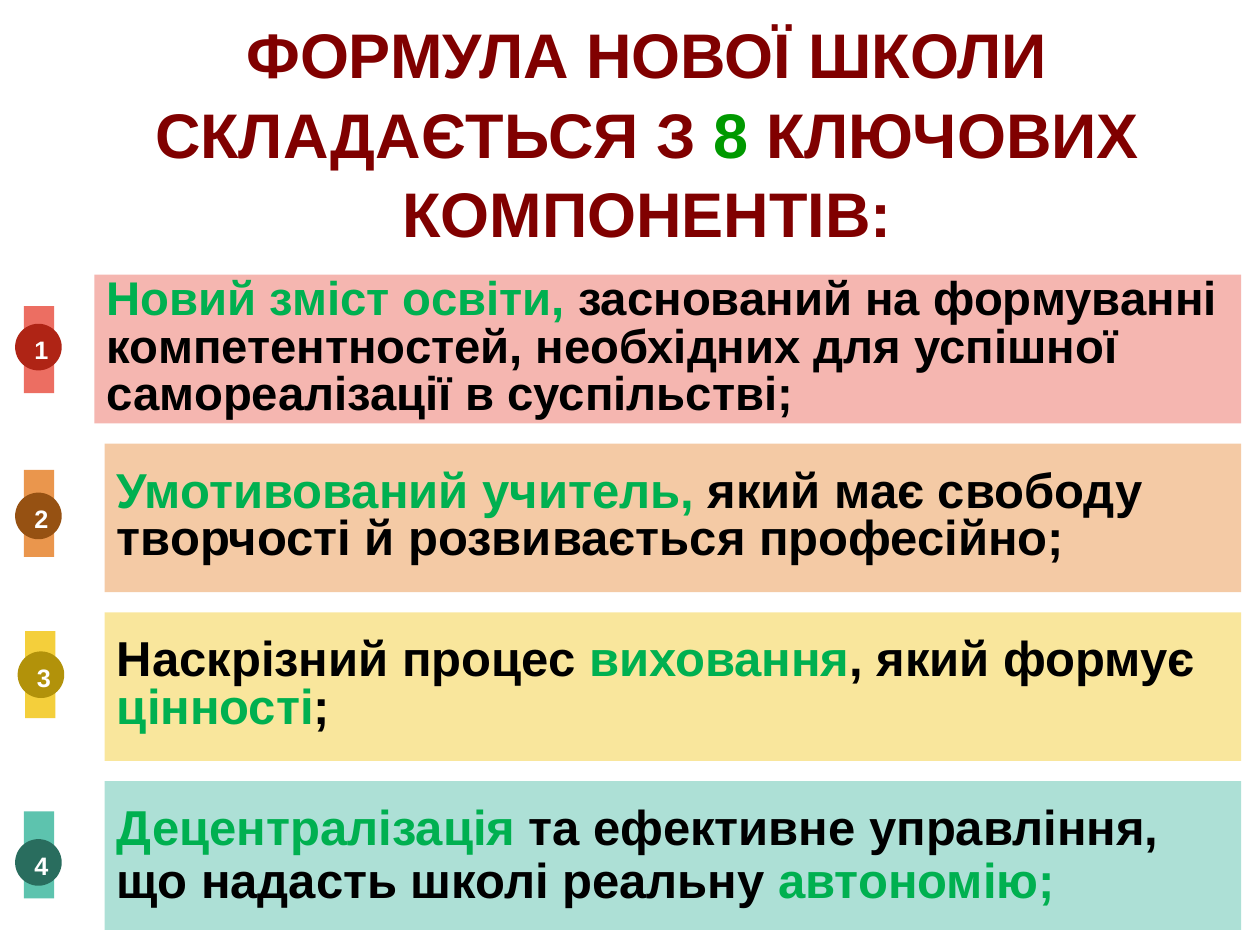
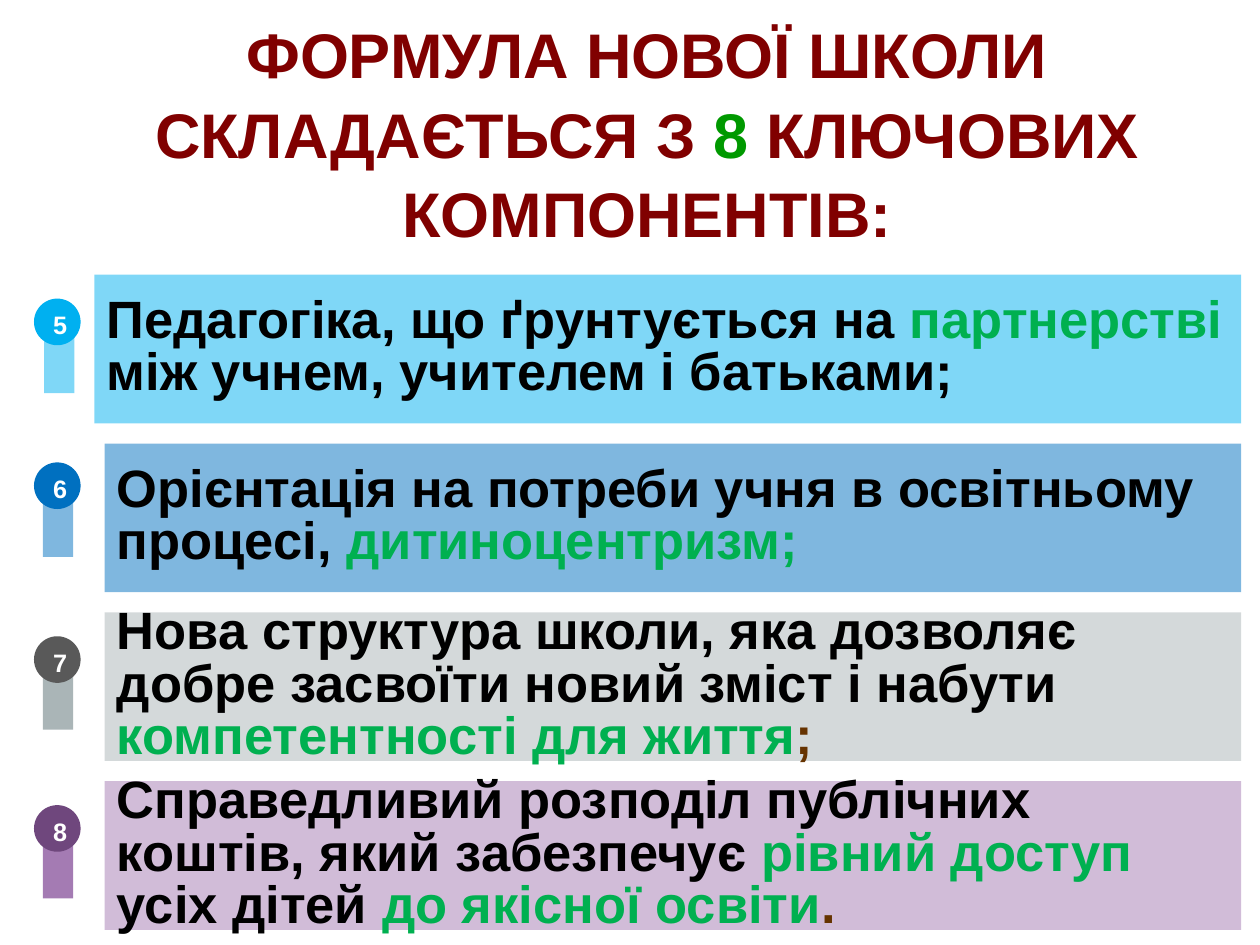
from pptx import Presentation
from pptx.dml.color import RGBColor
from pptx.enum.shapes import MSO_SHAPE
from pptx.enum.text import MSO_ANCHOR, MSO_AUTO_SIZE, PP_ALIGN
from pptx.oxml.ns import qn
from pptx.util import Inches, Pt
from lxml.etree import SubElement

COLORS = {
    "title": "800000", "eight": "009900", "black": "000000", "green": "00B050",
    "brown": "663300", "white": "FFFFFF",
    "red": "EC6E62", "dark red": "AF2415", "orange": "EA964D", "dark orange": "965112",
    "yellow": "F4CF3B", "dark yellow": "B2920A", "teal": "5DC3AE", "dark teal": "296D5E",
    "sky": "00B0F0", "blue": "0070C0", "gray": "AAB5B7", "dark gray": "595959",
    "purple": "A47BB3", "dark purple": "6F477D",
}
TITLE = [("ФОРМУЛА НОВОЇ ШКОЛИ СКЛАДАЄТЬСЯ З ", "title"), ("8", "eight"),
         (" КЛЮЧОВИХ КОМПОНЕНТІВ:", "title")]
CARD_TOP, CARD_PITCH, CARD_HEIGHT, CARD_RIGHT = 2.18, 1.34, 1.18, 9.85
TAB_WIDTH, TAB_HEIGHT, BADGE_SIZE = 0.24, 0.69, 0.37

SLIDES = [
    [
        {"tab": (0.19, 2.43), "badge": (0.12, 2.57), "color": "red", "badge color": "dark red",
         "size": 27, "spacing": 27,
         "runs": [("Новий зміст освіти, ", "green"),
                  ("заснований на формуванні компетентностей, необхідних для успішної "
                   "самореалізації в суспільстві;", "black")]},
        {"tab": (0.19, 3.73), "badge": (0.12, 3.91), "color": "orange", "badge color": "dark orange",
         "size": 28, "spacing": 27,
         "runs": [("Умотивований учитель, ", "green"),
                  ("який має свободу творчості й розвивається професійно;", "black")]},
        {"tab": (0.2, 5.01), "badge": (0.14, 5.17), "color": "yellow", "badge color": "dark yellow",
         "size": 28, "spacing": 27,
         "runs": [("Наскрізний процес ", "black"), ("виховання", "green"),
                  (", який формує ", "black"), ("цінності", "green"), (";", "black")]},
        {"tab": (0.19, 6.44), "badge": (0.12, 6.66), "color": "teal", "badge color": "dark teal",
         "size": 28, "spacing": 30,
         "runs": [("Децентралізація ", "green"),
                  ("та ефективне управління, що надасть школі реальну ", "black"),
                  ("автономію;", "green")]},
    ],
    [
        {"tab": (0.35, 2.43), "badge": (0.27, 2.37), "color": "sky", "badge color": "sky",
         "size": 30, "spacing": 30, "tab alpha": 50,
         "runs": [("Педагогіка, що ґрунтується на ", "black"), ("партнерстві ", "green"),
                  ("між учнем, учителем і батьками;", "black")]},
        {"tab": (0.34, 3.73), "badge": (0.27, 3.67), "color": "blue", "badge color": "blue",
         "size": 30, "spacing": 30, "tab alpha": 50,
         "runs": [("Орієнтація на потреби учня в освітньому процесі, ", "black"),
                  ("дитиноцентризм;", "green")]},
        {"tab": (0.34, 5.1), "badge": (0.27, 5.05), "color": "gray", "badge color": "dark gray",
         "size": 30, "spacing": 30,
         "runs": [("Нова структура школи, яка дозволяє добре засвоїти новий зміст і набути ", "black"),
                  ("компетентності для життя", "green"), (";", "brown")]},
        {"tab": (0.34, 6.44), "badge": (0.27, 6.39), "color": "purple", "badge color": "dark purple",
         "size": 30, "spacing": 30,
         "runs": [("Справедливий розподіл публічних коштів, який забезпечує ", "black"),
                  ("рівний доступ ", "green"), ("усіх дітей ", "black"),
                  ("до якісної освіти", "green"), (".", "brown")]},
    ],
]


def add_block(slide, kind, left, top, width, height, color, alpha=100):
    shape = slide.shapes.add_shape(kind, Inches(left), Inches(top), Inches(width), Inches(height))
    shape.shadow.inherit = False
    shape.line.fill.background()
    shape.fill.solid()
    shape.fill.fore_color.rgb = RGBColor.from_string(COLORS[color])
    if alpha < 100:
        fill_color = shape._element.spPr.find(".//" + qn("a:srgbClr"))
        SubElement(fill_color, qn("a:alpha")).set("val", str(alpha * 1000))
    return shape


def write_text(shape, runs, size, alignment, spacing=None):
    frame_format = {"word_wrap": True, "auto_size": MSO_AUTO_SIZE.NONE,
                    "vertical_anchor": MSO_ANCHOR.MIDDLE}
    for name, value in frame_format.items():
        setattr(shape.text_frame, name, value)
    paragraph = shape.text_frame.paragraphs[0]
    paragraph.alignment = alignment
    paragraph.line_spacing = spacing
    for text, color in runs:
        run = paragraph.add_run()
        run.text = text
        for name, value in {"name": "Arial", "size": Pt(size), "bold": True}.items():
            setattr(run.font, name, value)
        run.font.color.rgb = RGBColor.from_string(COLORS[color])
    return paragraph


presentation = Presentation()
presentation.slide_width = Inches(10)
presentation.slide_height = Inches(7.5)

for first_number, components in zip((1, 5), SLIDES):
    slide = presentation.slides.add_slide(presentation.slide_layouts[5])
    title = slide.shapes.title
    title_place = {"left": 0.27, "top": 0.3, "width": 9.73, "height": 1.48}
    for name, value in title_place.items():
        setattr(title, name, Inches(value))
    write_text(title, TITLE, 36, PP_ALIGN.CENTER, 1.05)

    for row, component in enumerate(components):
        add_block(slide, MSO_SHAPE.RECTANGLE, *component["tab"], TAB_WIDTH, TAB_HEIGHT,
                  component["color"], component.get("tab alpha", 100))

        card_left = 0.83 if row else 0.75
        card = add_block(slide, MSO_SHAPE.RECTANGLE, card_left, CARD_TOP + row * CARD_PITCH,
                         CARD_RIGHT - card_left, CARD_HEIGHT, component["color"], 50)
        write_text(card, component["runs"], component["size"], PP_ALIGN.LEFT,
                   Pt(component["spacing"]))

        badge = add_block(slide, MSO_SHAPE.OVAL, *component["badge"], BADGE_SIZE, BADGE_SIZE,
                          component["badge color"])
        number = write_text(badge, [(str(first_number + row), "white")], 18, PP_ALIGN.CENTER)
        number.runs[0].font._element.set("cap", "small")

presentation.save("out.pptx")
